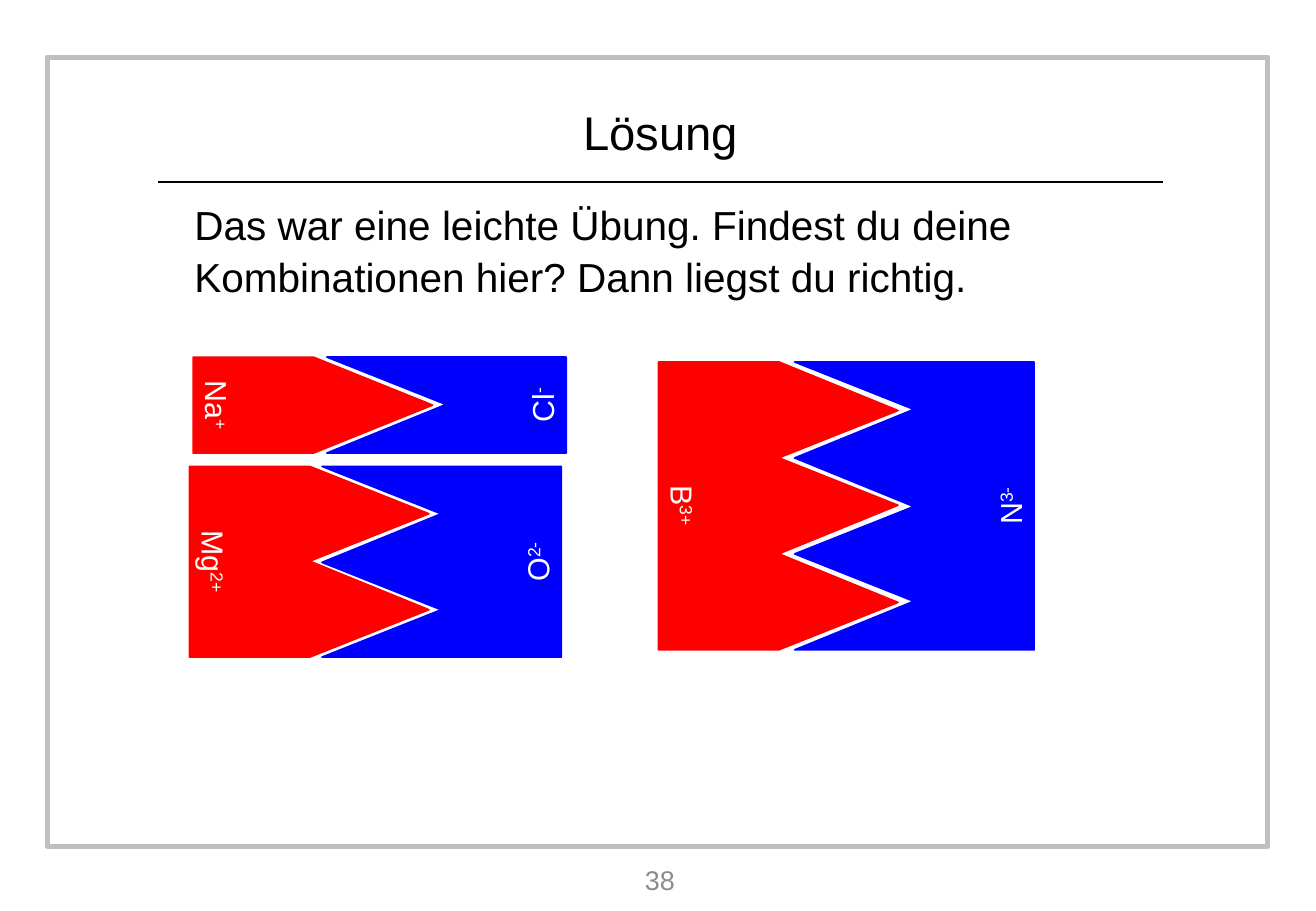
"""Build the solution slide with ion blocks whose teeth fit together."""
import dataclasses

import lxml.etree
import pptx
import pptx.dml.color
import pptx.enum.shapes
import pptx.enum.text
import pptx.oxml.ns
import pptx.shapes.autoshape
import pptx.slide
import pptx.text.text
import pptx.util

SCALE = 9144
FONT = "Arial"
BLACK = pptx.dml.color.RGBColor(0x00, 0x00, 0x00)
WHITE = pptx.dml.color.RGBColor(0xFF, 0xFF, 0xFF)
RED = pptx.dml.color.RGBColor(0xFF, 0x00, 0x00)
BLUE = pptx.dml.color.RGBColor(0x00, 0x00, 0xFF)
SILVER = pptx.dml.color.RGBColor(0xBF, 0xBF, 0xBF)
GREY = pptx.dml.color.RGBColor(0x8C, 0x8C, 0x8C)
CENTER = pptx.enum.text.PP_ALIGN.CENTER
LEFT = pptx.enum.text.PP_ALIGN.LEFT
MIDDLE = pptx.enum.text.MSO_ANCHOR.MIDDLE
WIDTH = 197
ROOT = 99


@dataclasses.dataclass(frozen=True)
class Ion:
    name: str
    charge: str
    left: int
    top: int
    height: int
    teeth: int

    @property
    def metal(self) -> bool:
        return self.charge.endswith("+")


IONS = (
    Ion("Na", "+", 159, 294, 79, 1),
    Ion("Cl", "-", 269, 294, 79, 1),
    Ion("O", "2-", 265, 384, 157, 2),
    Ion("Mg", "2+", 156, 384, 157, 2),
    Ion("N", "3-", 654, 298, 237, 3),
    Ion("B", "3+", 542, 298, 237, 3),
)


def px(count: int) -> pptx.util.Emu:
    return pptx.util.Emu(count * SCALE)


def style(para: pptx.text.text._Paragraph, size: int,
          color: pptx.dml.color.RGBColor, align: pptx.enum.text.PP_ALIGN) -> None:
    para.alignment = align
    para.font.size = pptx.util.Pt(size)
    para.font.name = FONT
    para.font.color.rgb = color


def place(shape: pptx.shapes.autoshape.Shape, left: int, top: int,
          width: int, height: int) -> None:
    shape.left, shape.top = px(left), px(top)
    shape.width, shape.height = px(width), px(height)


def draw_frame(slide: pptx.slide.Slide) -> None:
    frame = slide.shapes.add_shape(
        pptx.enum.shapes.MSO_SHAPE.RECTANGLE, px(39), px(47), px(1004), px(650))
    frame.shadow.inherit = False
    frame.fill.background()
    frame.line.color.rgb = SILVER
    frame.line.width = pptx.util.Pt(3)
    rule = slide.shapes.add_connector(
        pptx.enum.shapes.MSO_CONNECTOR.STRAIGHT, px(130), px(150), px(957), px(150))
    rule.line.color.rgb = BLACK
    rule.line.width = pptx.util.Pt(1.5)
    lxml.etree.SubElement(rule._element.spPr, pptx.oxml.ns.qn("a:effectLst"))


def write_text(slide: pptx.slide.Slide) -> None:
    title, body = slide.placeholders
    place(title, 469, 79, 149, 59)
    title.text_frame.text = "Lösung"
    title.text_frame.word_wrap = False
    title.text_frame.vertical_anchor = MIDDLE
    style(title.text_frame.paragraphs[0], 28, BLACK, CENTER)

    place(body, 150, 157, 787, 472)
    body.text_frame.text = ("Das war eine leichte Übung. Findest du deine "
                            "Kombinationen hier? Dann liegst du richtig.")
    body.text_frame.auto_size = pptx.enum.text.MSO_AUTO_SIZE.NONE
    para = body.text_frame.paragraphs[0]
    para.line_spacing = 1.07
    para.space_before = pptx.util.Pt(0)
    props = para._p.get_or_add_pPr()
    props.set("marL", "0")
    props.set("indent", "0")
    lxml.etree.SubElement(props, pptx.oxml.ns.qn("a:buNone"))
    style(para, 24, BLACK, LEFT)

    page = slide.shapes.add_textbox(px(421), px(705), px(244), px(39))
    page.text_frame.text = "38"
    page.text_frame.word_wrap = True
    page.text_frame.vertical_anchor = MIDDLE
    style(page.text_frame.paragraphs[0], 16, GREY, CENTER)


def add_plate(slide: pptx.slide.Slide, ion: Ion) -> pptx.shapes.autoshape.Shape:
    plate = slide.shapes.add_shape(
        pptx.enum.shapes.MSO_SHAPE.PENTAGON,
        px(ion.left), px(ion.top), px(WIDTH), px(ion.height))
    plate.adjustments[0] = (WIDTH - ROOT) / ion.height
    return plate


def add_teeth(slide: pptx.slide.Slide, ion: Ion) -> pptx.shapes.autoshape.Shape:
    ends = (ROOT, WIDTH) if ion.metal else (WIDTH, ROOT)
    steps = 2 * ion.teeth
    edge = [(ion.left + ends[step % 2], ion.top + round(ion.height * step / steps))
            for step in range(steps + 1)]
    form = slide.shapes.build_freeform(ion.left, ion.top, scale=SCALE)
    form.add_line_segments([*edge, (ion.left, ion.top + ion.height)], close=True)
    return form.convert_to_shape()


def draw_ion(slide: pptx.slide.Slide, ion: Ion) -> None:
    plain = ion.metal and ion.teeth == 1
    shape = add_plate(slide, ion) if plain else add_teeth(slide, ion)
    color = RED if ion.metal else BLUE
    shape.rotation = 0 if ion.metal else 180
    shape.shadow.inherit = False
    shape.fill.solid()
    shape.fill.fore_color.rgb = color
    shape.line.color.rgb = color
    shape.line.width = pptx.util.Pt(1)
    frame = shape.text_frame
    frame.vertical_anchor = pptx.enum.text.MSO_ANCHOR.BOTTOM
    frame._txBody.bodyPr.set("vert", "vert")
    para = frame.paragraphs[0]
    style(para, 18, WHITE, CENTER)
    para.add_run().text = ion.name
    charge = para.add_run()
    charge.text = ion.charge
    charge._r.get_or_add_rPr().set("baseline", "30000")


def main() -> None:
    deck = pptx.Presentation()
    deck.slide_width, deck.slide_height = px(1083), px(750)
    slide = deck.slides.add_slide(deck.slide_layouts[1])
    draw_frame(slide)
    write_text(slide)
    for ion in IONS:
        draw_ion(slide, ion)
    deck.save("out.pptx")


if __name__ == "__main__":
    main()
